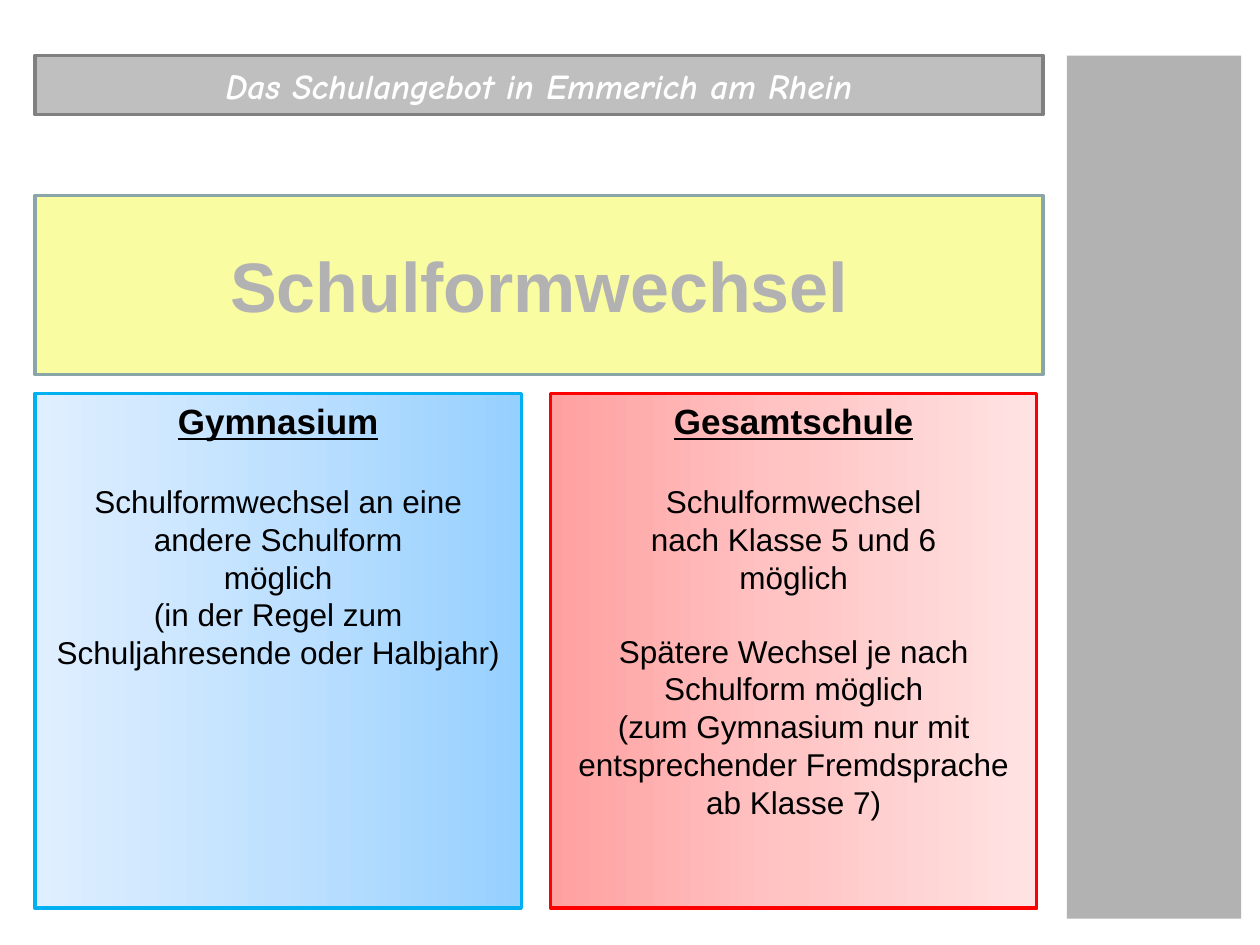
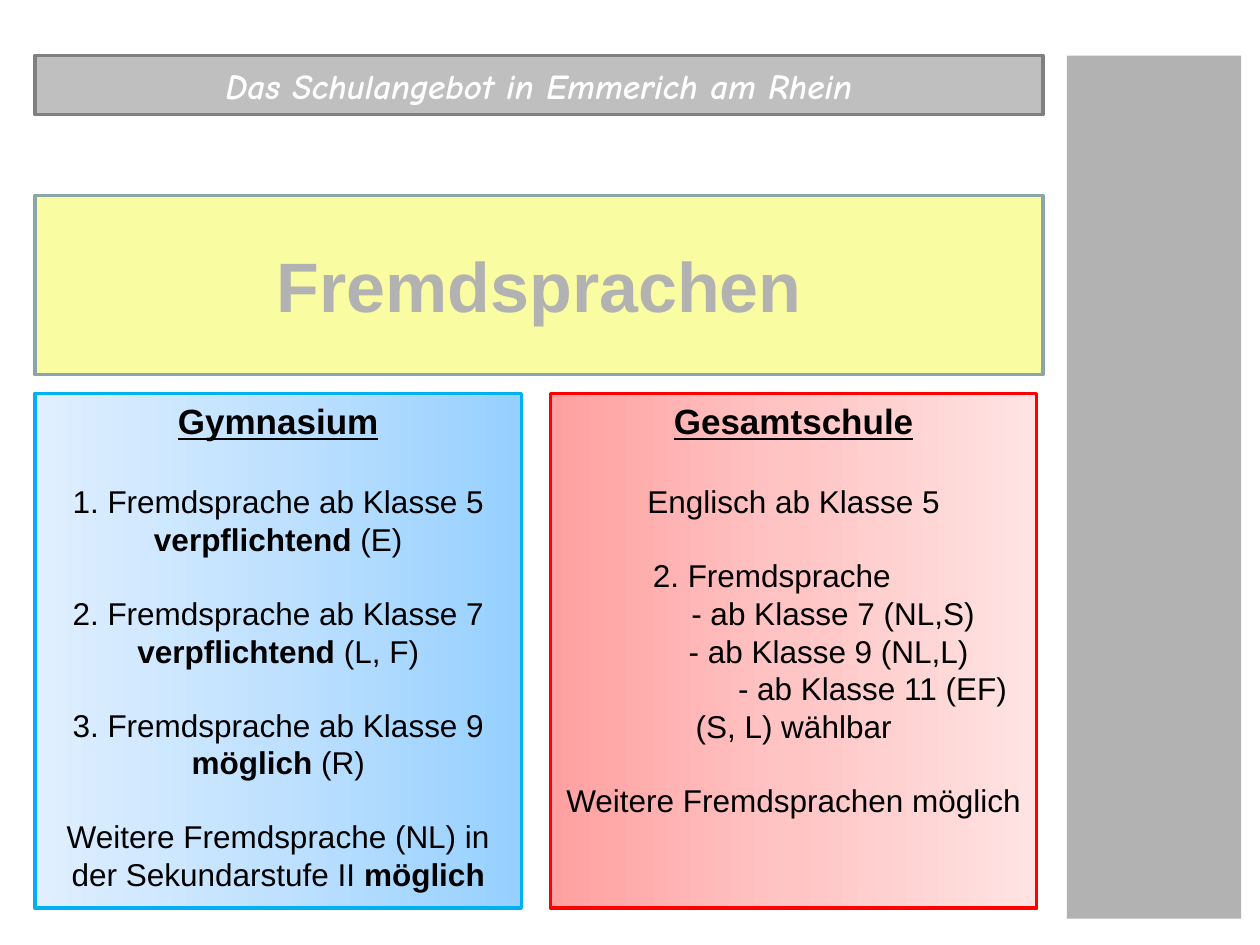
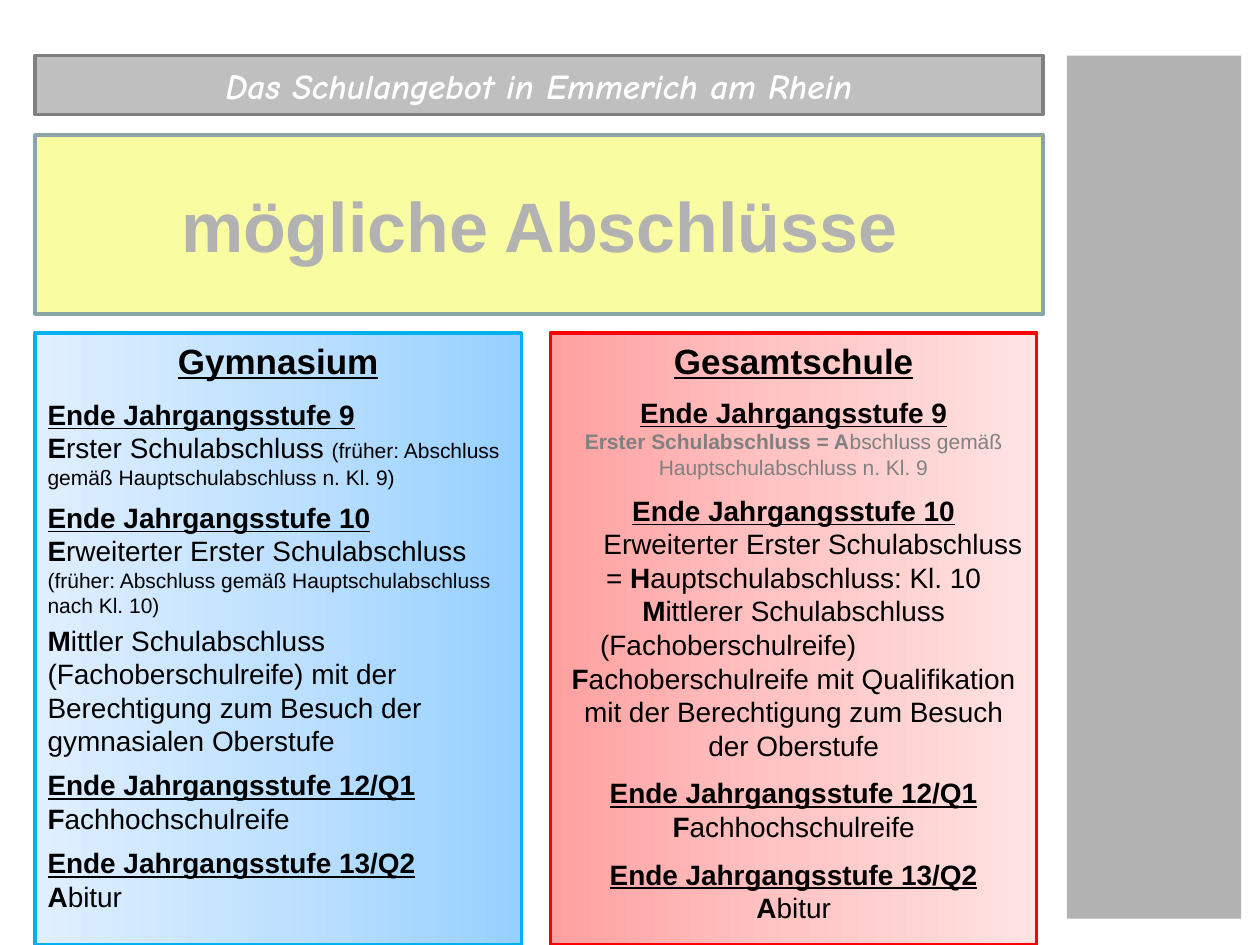
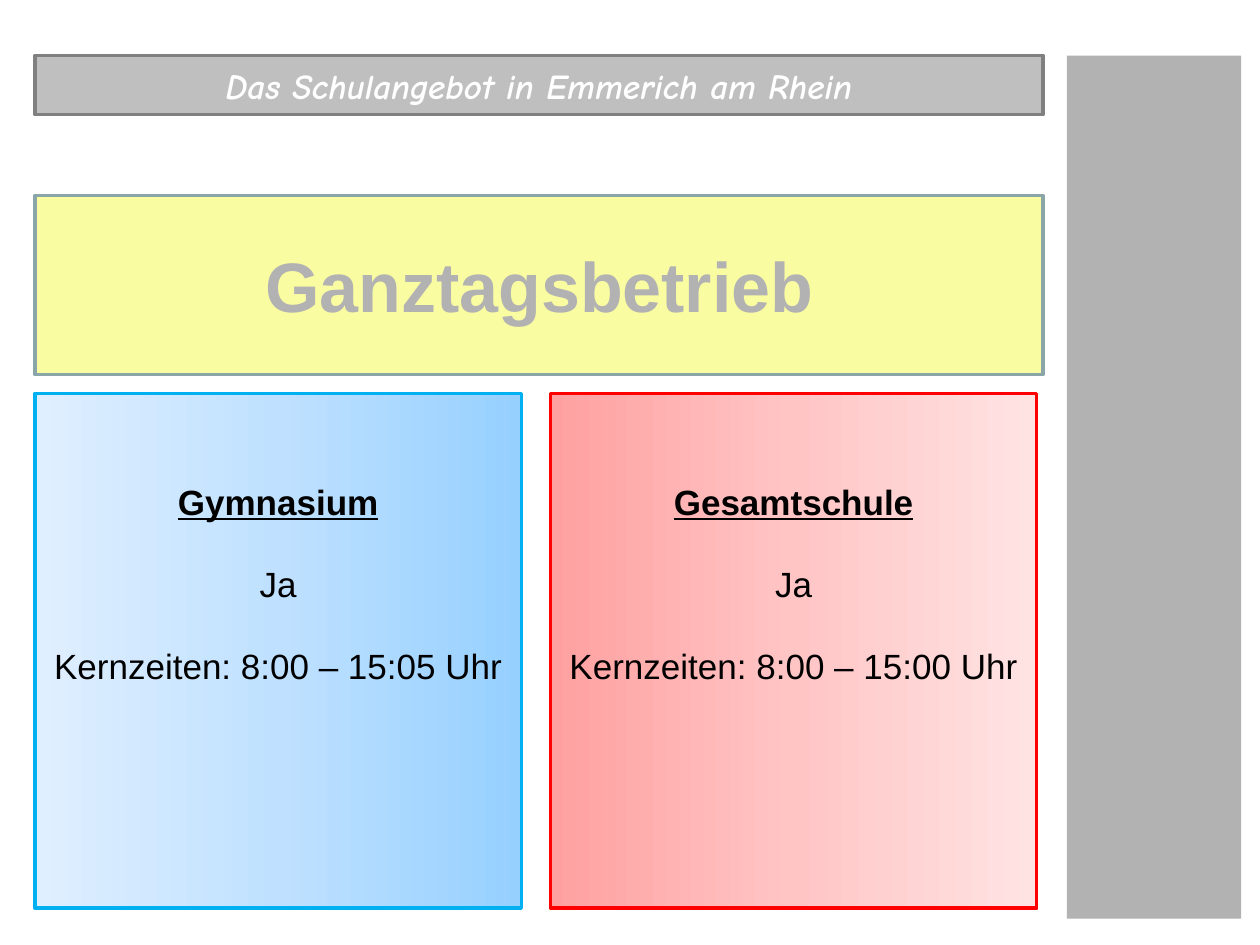
from dataclasses import dataclass
from lxml.etree import SubElement
from pptx import Presentation
from pptx.dml.color import RGBColor
from pptx.enum.shapes import MSO_SHAPE as Preset
from pptx.enum.text import MSO_ANCHOR as Anchor, MSO_AUTO_SIZE as AutoSize, PP_ALIGN as Align
from pptx.oxml.ns import qn
from pptx.util import Cm, Pt


@dataclass(frozen=True)
class Theme:
    text_font: str = "Arial"
    header_font: str = "Comic Neue"
    white: str = "FFFFFF"
    black: str = "000000"
    muted: str = "808080"
    grey: str = "B2B2B2"
    header_fill: str = "BFBFBF"
    banner_fill: str = "FAFCA2"
    banner_line: str = "8AA6A8"
    line: float = 2
    title: int = 40
    heading: int = 20
    body: int = 18
    compact: int = 16
    small: int = 12


@dataclass(frozen=True)
class Line:
    text: str
    size: int = 18
    before: float = 0
    after: float = 0
    underline: bool = False
    align: Align = Align.CENTER
    left: float = 0
    indent: float = 0
    color: str = "000000"


@dataclass(frozen=True)
class School:
    name: str
    left: float
    stops: tuple
    angle: int
    line: str


THEME = Theme()
GAP = 20.7
BIG_GAP = 23
TIGHT_GAP = 8

HEADER = "Das Schulangebot in Emmerich am Rhein"
SCHOOLS = [
    School("Gymnasium", 0.71, ("96D0FF", "BFE1FF", "E0EFFF"), 180, "00B0F0"),
    School("Gesamtschule", 11.1, ("FFA0A0", "FFC5C5", "FFE3E3"), 0, "FF0000"),
]


def stage(name, before, align=Align.CENTER):
    return Line(f"*Ende Jahrgangsstufe {name}*", THEME.compact, before, underline=True, align=align)


def compact(text, **options):
    return Line(text, THEME.compact, **options)


def core_hours(end):
    return [
        Line("Ja", THEME.heading, BIG_GAP),
        Line(f"Kernzeiten: 8:00 – {end} Uhr", THEME.heading, BIG_GAP),
    ]


# "*" switches bold on and off, "|" starts the small print of a line
SLIDES = [
    {
        "title": "Schulformwechsel",
        "columns": [
            [
                Line("Schulformwechsel an eine andere Schulform", before=BIG_GAP),
                Line("möglich"),
                Line("(in der Regel zum Schuljahresende oder Halbjahr)"),
            ],
            [
                Line("Schulformwechsel", before=BIG_GAP),
                Line("nach Klasse 5 und 6"),
                Line("möglich"),
                Line("Spätere Wechsel je nach Schulform möglich", before=GAP),
                Line("(zum Gymnasium nur mit entsprechender Fremdsprache ab Klasse 7)"),
            ],
        ],
    },
    {
        "title": "Fremdsprachen",
        "columns": [
            [
                Line("1. Fremdsprache ab Klasse 5", before=BIG_GAP),
                Line("*verpflichtend* (E)"),
                Line("2. Fremdsprache ab Klasse 7 *verpflichtend* (L, F)", before=GAP),
                Line("3. Fremdsprache ab Klasse 9 *möglich* (R)", before=GAP),
                Line("Weitere Fremdsprache (NL) in der Sekundarstufe II *möglich*", before=GAP),
            ],
            [
                Line("Englisch ab Klasse 5", before=BIG_GAP),
                Line("2. Fremdsprache", before=GAP, align=Align.LEFT, left=1.81),
                Line("- ab Klasse 7 (NL,S)", indent=1.59),
                Line("- ab Klasse 9 (NL,L)", indent=1.41),
                Line("- ab Klasse 11 (EF) (S, L) wählbar", indent=3.18),
                Line("Weitere Fremdsprachen möglich", before=GAP),
            ],
        ],
    },
    {
        "title": "mögliche Abschlüsse",
        "banner_top": 2.72,
        "bottom": 19.05,
        "columns": [
            [
                stage("9", 9.2, Align.LEFT),
                compact("*E*rster Schulabschluss |(früher: Abschluss gemäß "
                        "Hauptschulabschluss n. Kl. 9)", align=Align.LEFT),
                stage("10", 6, Align.LEFT),
                compact("*E*rweiterter Erster Schulabschluss |(früher: Abschluss gemäß "
                        "Hauptschulabschluss nach Kl. 10)", after=3, align=Align.LEFT),
                compact("*M*ittler Schulabschluss (Fachoberschulreife) mit der "
                        "Berechtigung zum Besuch der gymnasialen Oberstufe", align=Align.LEFT),
                stage("12/Q1", 6, Align.LEFT),
                compact("*F*achhochschulreife", align=Align.LEFT),
                stage("13/Q2", 6, Align.LEFT),
                compact("*A*bitur", align=Align.LEFT),
            ],
            [
                stage("9", TIGHT_GAP),
                Line("*Erster Schulabschluss = A*bschluss gemäß Hauptschulabschluss n. Kl. 9",
                     THEME.small, color=THEME.muted),
                stage("10", TIGHT_GAP),
                compact("Erweiterter Erster Schulabschluss = *H*auptschulabschluss: Kl. 10 "
                        "*M*ittlerer Schulabschluss", indent=0.78),
                compact("(Fachoberschulreife)", align=Align.LEFT, left=0.75),
                compact("*F*achoberschulreife mit Qualifikation mit der Berechtigung "
                        "zum Besuch der Oberstufe"),
                stage("12/Q1", TIGHT_GAP),
                compact("*F*achhochschulreife"),
                stage("13/Q2", TIGHT_GAP),
                compact("*A*bitur"),
            ],
        ],
    },
    {
        "title": "Ganztagsbetrieb",
        "text_top": 1.75,
        "columns": [core_hours("15:05"), core_hours("15:00")],
    },
]

LEFT, TOP, WIDTH = 0.71, 1.12, 20.32
HEADER_HEIGHT = 1.19
BANNER_TOP, BANNER_HEIGHT, BANNER_GAP = 3.94, 3.61, 0.38
COLUMN_WIDTH, COLUMN_BOTTOM = 9.8, 18.31
SIDEBAR = (21.51, TOP, 3.51, 17.4)


def color(value):
    return RGBColor.from_string(value)


def style_font(font, name, size, value, bold=None):
    font.name, font.size, font.bold = name, Pt(size), bold
    font.color.rgb = color(value)


def outline(shape, value):
    shape.line.color.rgb = color(value)
    shape.line.width = Pt(THEME.line)


def add_box(slide, place, fill=None):
    shape = slide.shapes.add_shape(Preset.RECTANGLE, *map(Cm, place))
    shape.shadow.inherit = False
    if fill:
        shape.fill.solid()
        shape.fill.fore_color.rgb = color(fill)
    return shape


def add_sidebar(master, slide):
    sidebar = add_box(slide, SIDEBAR, THEME.grey)
    sidebar.line.fill.background()
    sidebar.element.nvSpPr.cNvPr.set("id", "50")
    master.shapes.element.insert(2, sidebar.element)


def add_header(slide):
    header = add_box(slide, (LEFT, TOP, WIDTH, HEADER_HEIGHT), THEME.header_fill)
    outline(header, THEME.muted)
    header.text_frame.vertical_anchor = Anchor.MIDDLE
    paragraph = header.text_frame.paragraphs[0]
    paragraph.text = HEADER
    paragraph.alignment = Align.CENTER
    style_font(paragraph.font, THEME.header_font, THEME.heading, THEME.white, True)
    paragraph.font.italic = True


def format_banner(title, text, top):
    title.left, title.top, title.width, title.height = map(Cm, (LEFT, top, WIDTH, BANNER_HEIGHT))
    geometry = SubElement(title.element.spPr, qn("a:prstGeom"), prst="snip2SameRect")
    SubElement(geometry, qn("a:avLst"))
    title.fill.solid()
    title.fill.fore_color.rgb = color(THEME.banner_fill)
    outline(title, THEME.banner_line)
    frame = title.text_frame
    frame.text = text
    frame.auto_size = AutoSize.NONE
    frame.vertical_anchor = Anchor.MIDDLE
    paragraph = frame.paragraphs[0]
    paragraph.alignment = Align.CENTER
    style_font(paragraph.font, THEME.text_font, THEME.title, THEME.grey, True)


def fill_gradient(shape, stops, angle):
    shape.fill.gradient()
    shape.fill.gradient_angle = angle
    stop_list = shape.element.spPr.find(f".//{qn('a:gsLst')}")
    for stop in list(stop_list):
        stop_list.remove(stop)
    for index, value in enumerate(stops):
        stop = SubElement(stop_list, qn("a:gs"), pos=str(index * 50000))
        SubElement(stop, qn("a:srgbClr"), val=value)


def write_line(paragraph, line):
    paragraph.alignment = line.align
    paragraph.space_before, paragraph.space_after = Pt(line.before), Pt(line.after)
    style_font(paragraph.font, THEME.text_font, line.size, line.color)
    paragraph.font.underline = line.underline
    properties = paragraph._p.get_or_add_pPr()
    properties.set("marL", str(Cm(line.left)))
    properties.set("indent", str(Cm(line.indent)))
    main, _, small_print = line.text.partition("|")
    for index, text in enumerate(main.split("*")):
        if text:
            run = paragraph.add_run()
            run.text = text
            run.font.bold = index % 2 == 1
    if small_print:
        run = paragraph.add_run()
        run.text = small_print
        run.font.size = Pt(THEME.small)


def add_column(slide, school, lines, top, bottom, text_top):
    column = add_box(slide, (school.left, top, COLUMN_WIDTH, bottom - top))
    fill_gradient(column, school.stops, school.angle)
    outline(column, school.line)
    frame = column.text_frame
    frame.word_wrap = True
    frame.vertical_anchor = Anchor.TOP
    frame.margin_top = Cm(text_top)
    heading = Line(f"*{school.name}*", THEME.heading, underline=True)
    for index, line in enumerate([heading, *lines]):
        write_line(frame.add_paragraph() if index else frame.paragraphs[0], line)


def main():
    presentation = Presentation()
    presentation.slide_width, presentation.slide_height = Cm(25.4), Cm(19.05)
    layout = presentation.slide_layouts.get_by_name("Title Only")
    for number, content in enumerate(SLIDES):
        slide = presentation.slides.add_slide(layout)
        if number == 0:
            add_sidebar(presentation.slide_master, slide)
        add_header(slide)
        banner_top = content.get("banner_top", BANNER_TOP)
        format_banner(slide.shapes.title, content["title"], banner_top)
        column_top = banner_top + BANNER_HEIGHT + BANNER_GAP
        for school, lines in zip(SCHOOLS, content["columns"]):
            add_column(slide, school, lines, column_top,
                       content.get("bottom", COLUMN_BOTTOM), content.get("text_top", 0.13))
    presentation.save("out.pptx")


if __name__ == "__main__":
    main()
